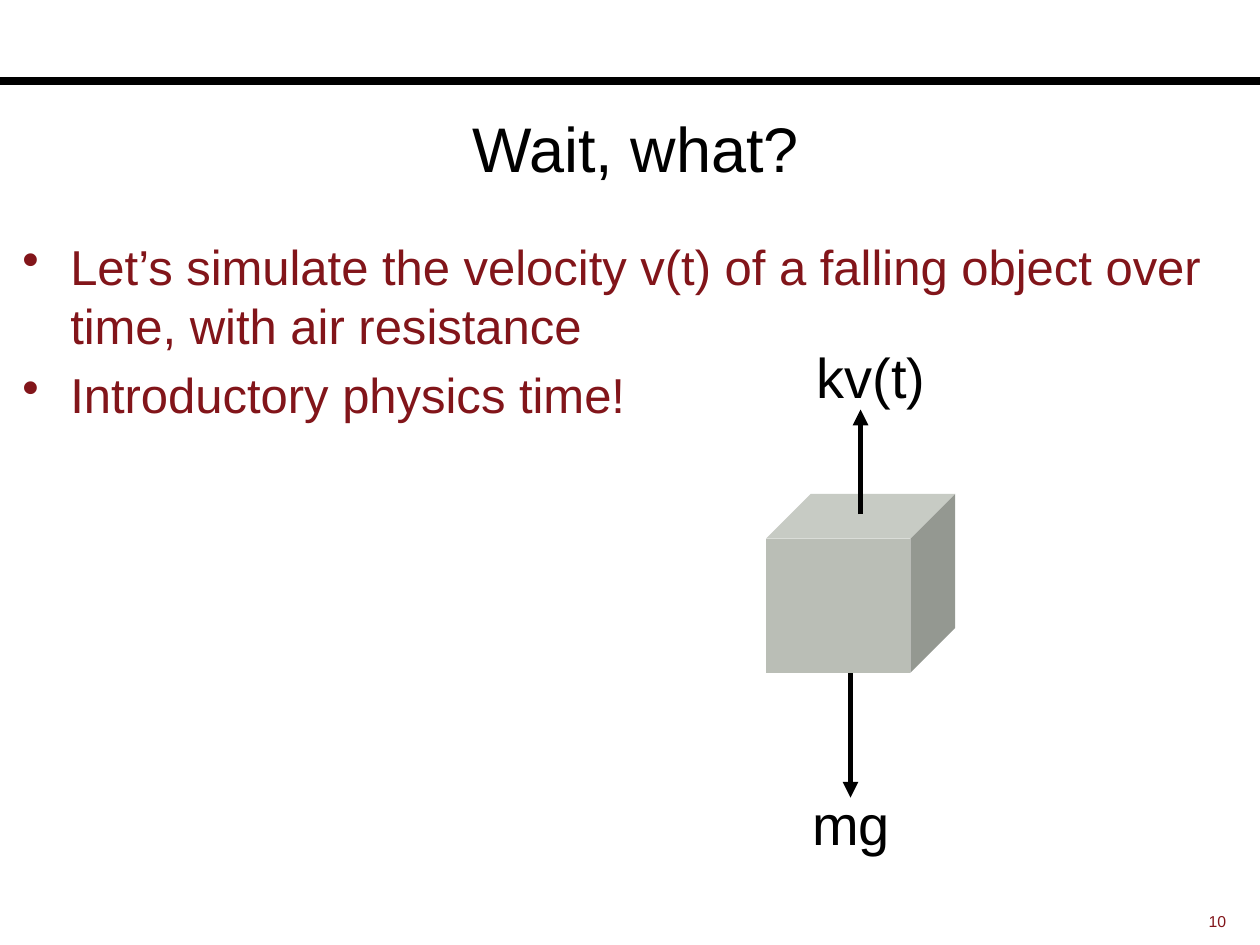
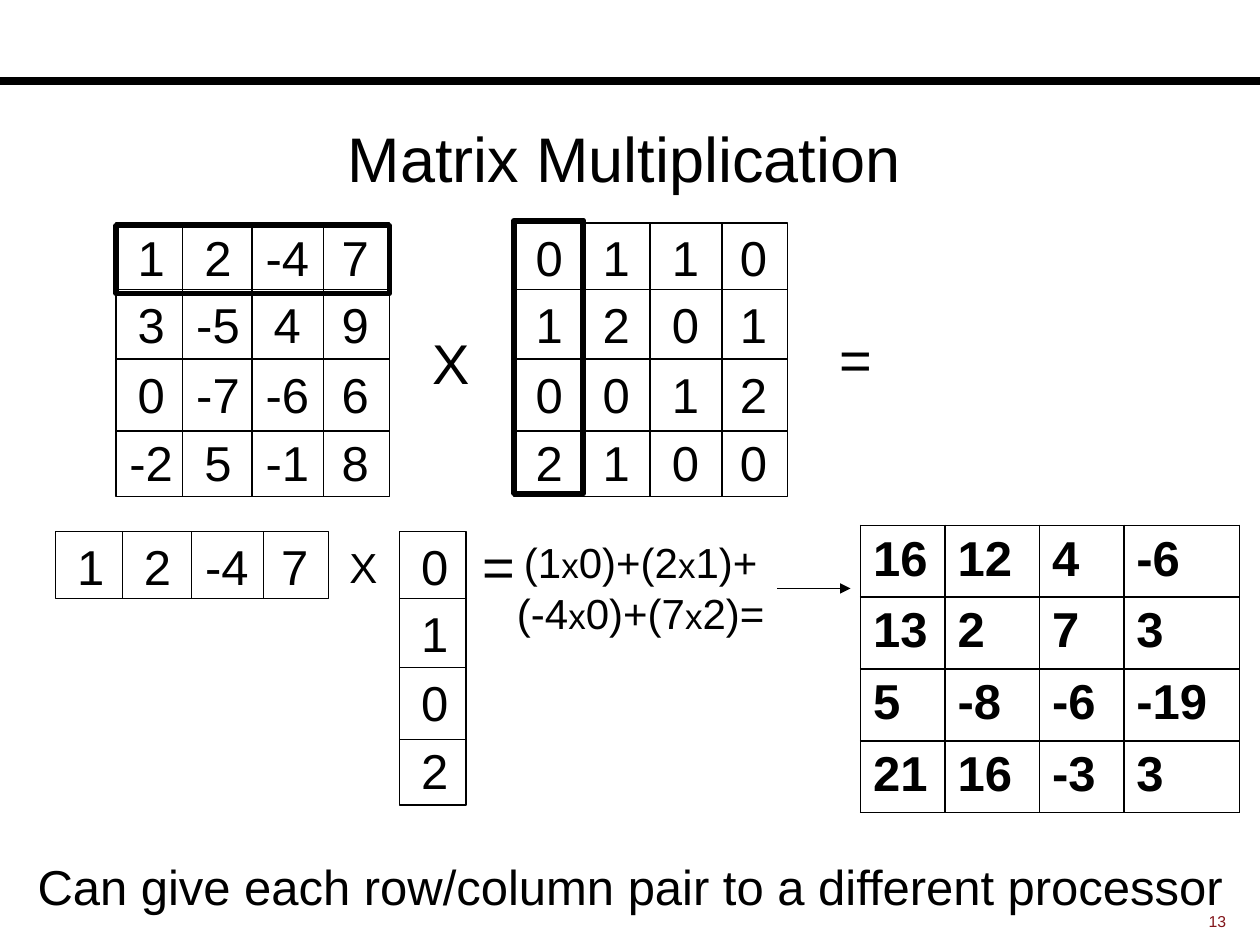
from lxml import etree
from pptx import Presentation
from pptx.dml.color import RGBColor
from pptx.enum import shapes, text
from pptx.oxml import ns
from pptx.util import Inches, Pt

FONT = "Arial"
HUES = {"ink": "000000", "red": "82151A", "cube": "BABEB6", "page": "FFFFFF"}
ALIGN = text.PP_ALIGN
EDGES = (0, 0.53, 1.08, 1.65, 2.17)
STEPS = (0, 0.53, 1.08, 1.62)
SIDE = EDGES[-1]

LEFT = [("1", "2", "-4", "7"), ("3", "-5", "4", "9"),
        ("0", "-7", "-6", "6"), ("-2", "5", "-1", "8")]
RIGHT = [("0", "1", "1", "0"), ("1", "2", "0", "1"),
         ("0", "0", "1", "2"), ("2", "1", "0", "0")]
ANSWER = [("16", "12", "4", "-6"), ("13", "2", "7", "3"),
          ("5", "-8", "-6", "-19"), ("21", "16", "-3", "3")]


def hue(name):
    return RGBColor.from_string(HUES[name])


def inch(*sizes):
    return [Inches(size) for size in sizes]


def add_run(para, words, size, color="ink", bold=False):
    run = para.add_run()
    run.text = words
    font = run.font
    font.name, font.size, font.bold = FONT, Pt(size), bold
    font.color.rgb = hue(color)


def add_box(parent, box):
    frame = parent.shapes.add_textbox(*inch(*box)).text_frame
    frame.word_wrap = True
    return frame


def add_label(parent, box, words, size, color="ink", align=ALIGN.CENTER):
    frame = add_box(parent, box)
    para = frame.paragraphs[0]
    para.alignment = align
    add_run(para, words, size, color)
    return frame


def add_line(parent, start, end, width=0.75, arrow=False):
    line = parent.shapes.add_connector(
        shapes.MSO_CONNECTOR.STRAIGHT, *inch(*start, *end))
    line.line.color.rgb = hue("ink")
    line.line.width = Pt(width)
    if arrow:
        tail = etree.SubElement(line.line._get_or_add_ln(), ns.qn("a:tailEnd"))
        tail.set("type", "triangle")
    etree.SubElement(line._element.spPr, ns.qn("a:effectLst"))


def add_frame(parent, box, width=0.75):
    rect = parent.shapes.add_shape(shapes.MSO_SHAPE.RECTANGLE, *inch(*box))
    rect.shadow.inherit = False
    rect.fill.background()
    rect.line.color.rgb = hue("ink")
    rect.line.width = Pt(width)


def add_cube(slide, box):
    cube = slide.shapes.add_shape(shapes.MSO_SHAPE.CUBE, *inch(*box))
    cube.shadow.inherit = False
    cube.fill.solid()
    cube.fill.fore_color.rgb = hue("cube")
    cube.line.fill.background()


def add_list(slide, box, items, size):
    frame = add_box(slide, box)
    for i, item in enumerate(items):
        para = frame.add_paragraph() if i else frame.paragraphs[0]
        props = para._p.get_or_add_pPr()
        props.set("marL", str(Inches(0.38)))
        props.set("indent", str(-Inches(0.38)))
        etree.SubElement(props, ns.qn("a:buChar")).set("char", "•")
        para.space_before = Pt(0.2 * size if i else 0)
        add_run(para, item, size, "red")


def add_grid(slide, x, y, rows):
    group = slide.shapes.add_group_shape()
    high, wide = len(rows), len(rows[0])
    right, base = x + EDGES[wide], y + EDGES[high]
    add_frame(group, (x, y, right - x, base - y))
    for edge in EDGES[1:wide]:
        add_line(group, (x + edge, y), (x + edge, base))
    for edge in EDGES[1:high]:
        add_line(group, (x, y + edge), (right, y + edge))
    for down, row in zip(STEPS, rows):
        for over, digit in zip(STEPS, row):
            add_label(group, (x + over - 0.01, y + down - 0.01, 0.58, 0.57),
                      digit, 28)


def add_edges(cell):
    props = cell._tc.get_or_add_tcPr()
    for i, side in enumerate(("lnL", "lnR", "lnT", "lnB")):
        line = etree.Element(ns.qn("a:" + side), w=str(Pt(1)))
        fill = etree.SubElement(line, ns.qn("a:solidFill"))
        etree.SubElement(fill, ns.qn("a:srgbClr")).set("val", HUES["ink"])
        props.insert(i, line)


def add_table(slide, x, y, widths, height, rows):
    box = inch(x, y, sum(widths), height * len(rows))
    table = slide.shapes.add_table(len(rows), len(widths), *box).table
    table.first_row = table.horz_banding = False
    for col, width in zip(table.columns, widths):
        col.width = Inches(width)
    for line, row in zip(table.rows, rows):
        line.height = Inches(height)
        for cell, digit in zip(line.cells, row):
            cell.fill.solid()
            cell.fill.fore_color.rgb = hue("page")
            add_edges(cell)
            para = cell.text_frame.paragraphs[0]
            para.alignment = ALIGN.LEFT
            add_run(para, digit, 28, bold=True)


def add_sum(slide, box, lines):
    para = add_box(slide, box).paragraphs[0]
    para.alignment = ALIGN.CENTER
    for i, parts in enumerate(lines):
        if i:
            para.add_line_break()
        for j, part in enumerate(parts):
            if j:
                add_run(para, "x", 20)
            add_run(para, part, 24)


def add_slide(deck, title, x, y, number):
    slide = deck.slides.add_slide(deck.slide_layouts[6])
    add_line(slide, (0, 0.64), (10, 0.64), 4.5)
    head = add_label(slide, (x, y, 9.75, 1), title, 36)
    head.vertical_anchor = text.MSO_ANCHOR.MIDDLE
    add_label(slide, (8.75, 7.19, 1.08, 0.25), number, 9, "red", ALIGN.RIGHT)
    return slide


def draw_fall(deck):
    slide = add_slide(deck, "Wait, what?", 0.17, 0.67, "10")
    add_list(slide, (0.08, 1.83, 9.77, 5.17), (
        "Let’s simulate the velocity v(t) of a falling object over time, "
        "with air resistance",
        "Introductory physics time!"), 28)
    add_line(slide, (6.75, 4.92), (6.75, 6.33), 3, True)
    add_cube(slide, (6.08, 3.92, 1.5, 1.42))
    add_line(slide, (6.83, 4.08), (6.83, 3.25), 3, True)
    add_label(slide, (6.33, 2.67, 1.17, 0.64), "kv(t)", 32)
    add_label(slide, (6.17, 6.22, 1.17, 0.64), "mg", 32)


def draw_matrix(deck):
    slide = add_slide(deck, "Matrix Multiplication", 0.08, 0.75, "13")
    add_grid(slide, 0.92, 1.77, LEFT)
    add_label(slide, (3.25, 2.56, 0.67, 0.64), "X", 32)
    add_grid(slide, 4.08, 1.77, RIGHT)
    add_label(slide, (6.33, 2.53, 0.92, 0.64), "=", 32)
    add_frame(slide, (0.92, 1.79, SIDE, 0.54), 3)
    add_frame(slide, (4.08, 1.75, 0.55, SIDE), 3)

    add_grid(slide, 0.44, 4.22, LEFT[:1])
    add_label(slide, (2.55, 4.25, 0.67, 0.5), "X", 24)
    add_grid(slide, 3.17, 4.22, [row[:1] for row in RIGHT])
    add_label(slide, (3.5, 4.17, 0.92, 0.64), "=", 32)
    add_sum(slide, (4, 4.21, 2.17, 0.91), (
        ("(1", "0)+(2", "1)+"), ("(-4", "0)+(7", "2)=")))
    add_line(slide, (6.17, 4.67), (6.75, 4.67), arrow=True)
    add_table(slide, 6.83, 4.17, (0.67, 0.75, 0.67, 0.92), 0.57, ANSWER)
    add_label(slide, (0, 6.75, 10, 0.57),
              "Can give each row/column pair to a different processor", 28)


def main():
    deck = Presentation()
    deck.slide_width, deck.slide_height = inch(10, 7.5)
    draw_fall(deck)
    draw_matrix(deck)
    deck.save("out.pptx")


if __name__ == "__main__":
    main()
